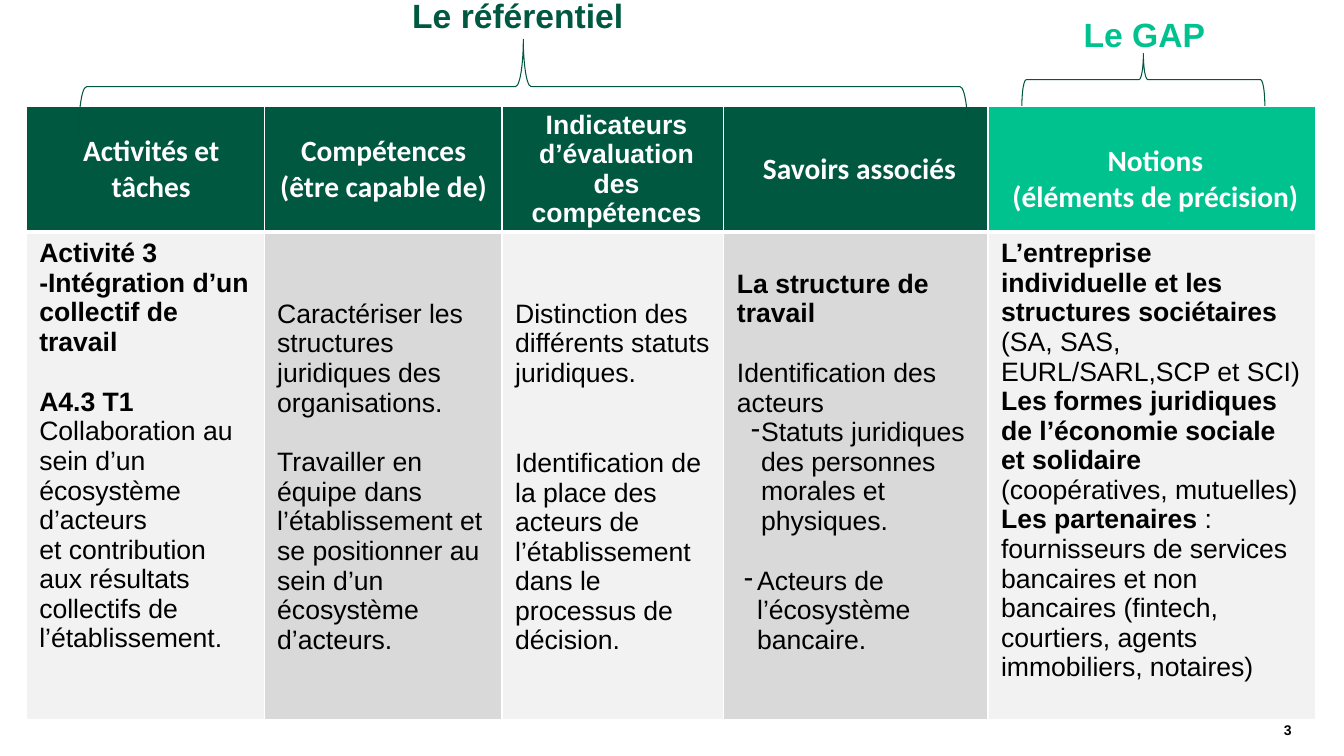
from lxml import etree
from pptx import Presentation
from pptx.dml.color import RGBColor
from pptx.enum.shapes import MSO_SHAPE as SHAPE
from pptx.enum.text import MSO_ANCHOR as ANCHOR, PP_ALIGN as ALIGN
from pptx.oxml.ns import qn
from pptx.util import Inches, Pt

GREEN, MINT, WHITE, BLACK = "005841", "00C28F", "FFFFFF", "000000"
LIGHT, GREY = "F2F2F2", "D9D9D9"
BODY_SIZE, LINE = 19, 0.3  # points, inches per body line

# Table: left, top, column widths, row heights (inches)
LEFT, TOP = 0.26, 1.06
COLS, ROWS = [2.36, 2.36, 2.2, 2.62, 3.25], [1.24, 4.84]

# Header: lines, font, size, fill, indent
HEADERS = [
    (["Activités et tâches"], "Calibri", 21, GREEN, 0.12),
    (["Compétences", "(être capable de)"], "Calibri", 21, GREEN, 0.01),
    (["Indicateurs d’évaluation des compétences"], "Arial", 19, GREEN, 0.07),
    (["Savoirs associés"], "Calibri", 21, GREEN, 0.07),
    (["Notions", "(éléments de précision)"], "Calibri", 21, MINT, 0.07),
]

# Body cell: fill, free lines above, paragraphs
# Paragraph: free lines before, (text, bold) runs, optional (margin, hanging) of a dash
BODY = [
    (LIGHT, 0, [
        (0, [("Activité 3 -Intégration d’un collectif de travail", True)]),
        (1, [("A4.3 T1 ", True),
             ("Collaboration au sein d’un écosystème d’acteurs et\u00a0contribution "
              "aux résultats collectifs de l’établissement.", False)]),
    ]),
    (GREY, 2, [
        (0, [("Caractériser les structures juridiques des organisations.", False)]),
        (1, [("Travailler en équipe dans l’établissement et se positionner "
              "au sein d’un écosystème d’acteurs.", False)]),
    ]),
    (LIGHT, 2, [
        (0, [("Distinction des différents statuts juridiques.", False)]),
        (2, [("Identification de la place des acteurs de l’établissement "
              "dans le processus de décision.", False)]),
    ]),
    (GREY, 1, [
        (0, [("La structure de travail", True)]),
        (1, [("Identification des acteurs", False)]),
        (0, [("Statuts juridiques des personnes morales et physiques.", False)], (0.24, 0.1)),
        (1, [("Acteurs de l’écosystème bancaire.", False)], (0.2, 0.13)),
    ]),
    (LIGHT, 0, [
        (0, [("L’entreprise individuelle et les structures sociétaires ", True),
             ("(SA, SAS, EURL/SARL,SCP et SCI) ", False),
             ("Les formes juridiques de l’économie sociale et solidaire", True),
             (" (coopératives, mutuelles)", False)]),
        (0, [("Les partenaires\u00a0", True),
             (": fournisseurs de services bancaires et non bancaires "
              "(fintech, courtiers, agents immobiliers, notaires)", False)]),
    ]),
]

# Brace: centre x, top, span, depth
BRACES = [(5.19, 0.39, 8.82, 0.94), (11.34, 0.53, 2.41, 0.52)]

# Label: text, box, size, colour, alignment, inset
LABELS = [
    ("Le référentiel", (3.99, -0.1, 4.09, 0.5), 24, GREEN, ALIGN.LEFT, 0.1),
    ("Le GAP", (10.65, 0.09, 1.57, 0.5), 24, MINT, ALIGN.LEFT, 0.1),
    ("3", (10.84, 6.98, 1.97, 0.52), 10, BLACK, ALIGN.RIGHT, 0),
]


def rgb(color):
    return RGBColor.from_string(color)


def style(r, font, size, color, bold=True):
    r.font.name, r.font.size, r.font.bold = font, Pt(size), bold
    r.font.color.rgb = rgb(color)


def set_indent(p, margin, hanging=0):
    pPr = p._p.get_or_add_pPr()
    pPr.set("marL", str(Inches(margin)))
    pPr.set("indent", str(-Inches(hanging)))
    return pPr


def set_cell(cell, fill, side, top, bottom, bottom_line=1):
    cell.margin_left = cell.margin_right = Inches(side)
    cell.margin_top, cell.margin_bottom = Inches(top), Inches(bottom)
    tcPr = cell._tc.get_or_add_tcPr()
    for edge, width in (("L", 1), ("R", 1), ("T", 1), ("B", bottom_line)):
        ln = etree.SubElement(tcPr, qn("a:ln" + edge), w=str(Pt(width)))
        solid = etree.SubElement(ln, qn("a:solidFill"))
        etree.SubElement(solid, qn("a:srgbClr"), val=WHITE)
    cell.fill.solid()
    cell.fill.fore_color.rgb = rgb(fill)


def next_paragraph(tf, i):
    return tf.add_paragraph() if i else tf.paragraphs[0]


prs = Presentation()
prs.slide_width, prs.slide_height = Inches(13.33), Inches(7.5)
slide = prs.slides.add_slide(prs.slide_layouts[6])

# Table grid
table = slide.shapes.add_table(
    len(ROWS), len(COLS), Inches(LEFT), Inches(TOP),
    Inches(sum(COLS)), Inches(sum(ROWS))).table
table.horz_banding = False
for column, width in zip(table.columns, COLS):
    column.width = Inches(width)
for row, height in zip(table.rows, ROWS):
    row.height = Inches(height)

# Header row: the last heading sits one line lower
for c, (lines, font, size, fill, margin) in enumerate(HEADERS):
    cell = table.cell(0, c)
    last = c == len(HEADERS) - 1
    set_cell(cell, fill, 0.1, 0.36 if last else 0, 0, 3)
    cell.vertical_anchor = ANCHOR.TOP if last else ANCHOR.MIDDLE
    for i, line in enumerate(lines):
        p = next_paragraph(cell.text_frame, i)
        p.text, p.alignment = line, ALIGN.CENTER
        set_indent(p, margin)
        style(p.runs[0], font, size, WHITE)

# Body row
for c, (fill, above, paragraphs) in enumerate(BODY):
    cell = table.cell(1, c)
    set_cell(cell, fill, 0.13, 0.07 + above * LINE, 0.07)
    for i, (gap, runs, *dash) in enumerate(paragraphs):
        p = next_paragraph(cell.text_frame, i)
        if gap:
            p.space_before = Inches(gap * LINE)
        for indent in dash:
            etree.SubElement(set_indent(p, *indent), qn("a:buChar"), char="-")
        for text, bold in runs:
            r = p.add_run()
            r.text = text
            style(r, "Arial", BODY_SIZE, BLACK, bold)

# Braces above the table, turned to point up
for center, top, span, depth in BRACES:
    sp = slide.shapes.add_shape(
        SHAPE.LEFT_BRACE, Inches(center - depth / 2), Inches(top + depth / 2 - span / 2),
        Inches(depth), Inches(span))
    sp.rotation = 90
    sp.shadow.inherit = False
    sp.fill.background()
    sp.line.color.rgb, sp.line.width = rgb("005640"), Pt(0.75)

# Brace labels and page number
for text, box, size, color, align, inset in LABELS:
    tf = slide.shapes.add_textbox(*map(Inches, box)).text_frame
    tf.word_wrap = True
    tf.margin_left = tf.margin_right = Inches(inset)
    tf.vertical_anchor = ANCHOR.MIDDLE
    p = tf.paragraphs[0]
    p.text, p.alignment = text, align
    style(p.runs[0], "Arial", size, color)

prs.save("out.pptx")
